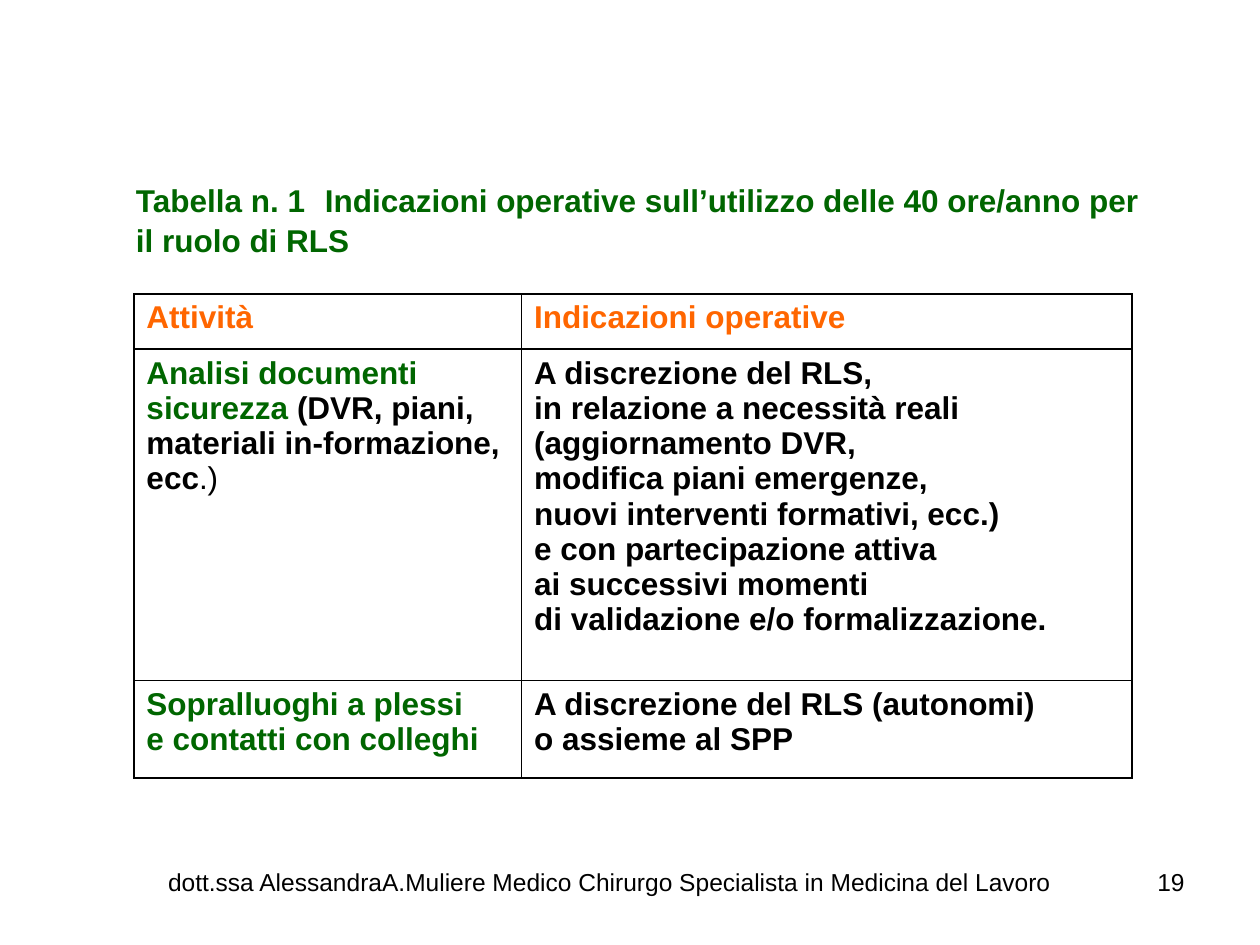
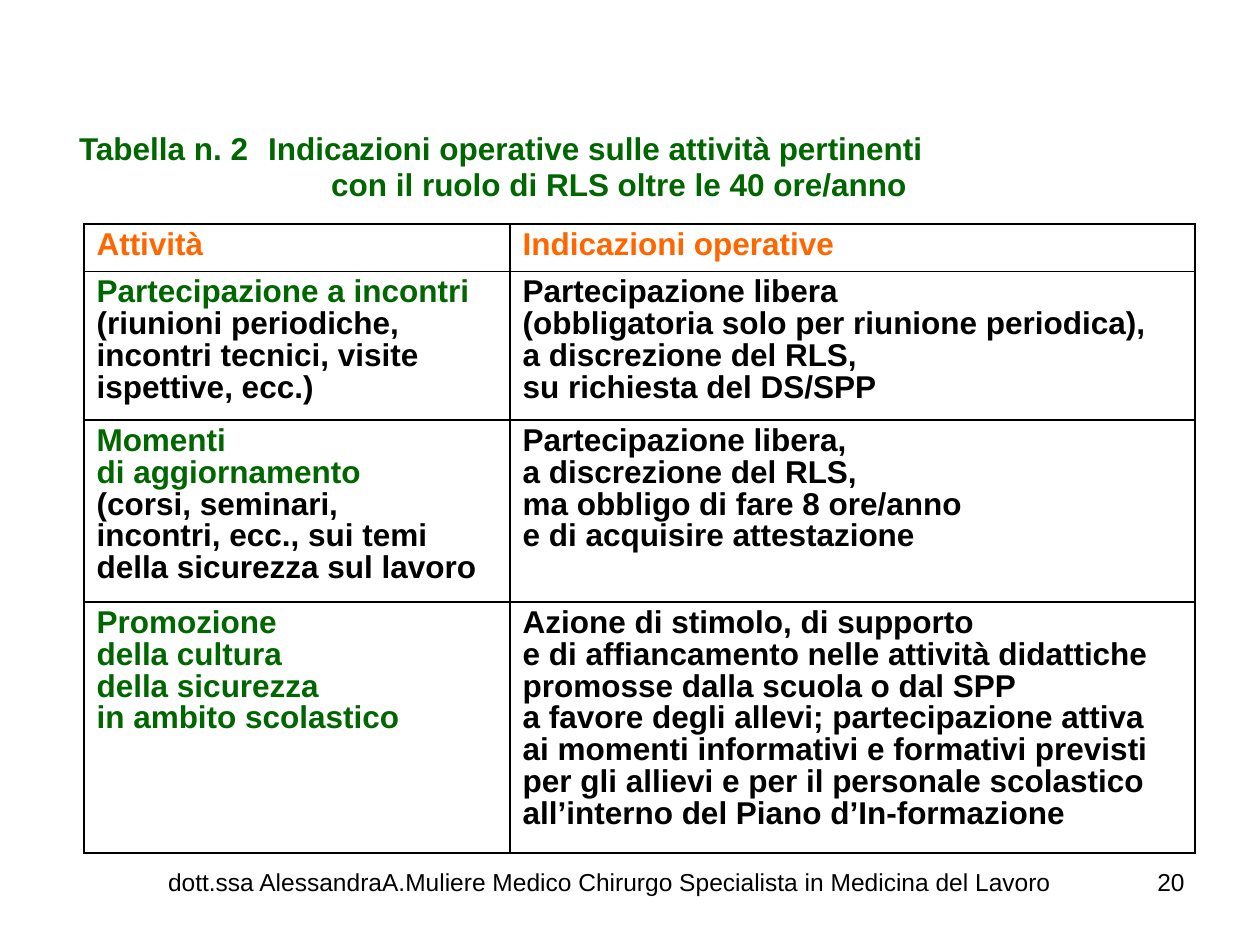
"""Build two slides of tables on the yearly hours and duties of the RLS role."""
from lxml import etree
from pptx import Presentation
from pptx.dml.color import RGBColor
from pptx.enum.text import MSO_ANCHOR, MSO_AUTO_SIZE, PP_ALIGN
from pptx.oxml.ns import qn
from pptx.util import Pt

LEFT, CENTER, RIGHT = PP_ALIGN.LEFT, PP_ALIGN.CENTER, PP_ALIGN.RIGHT
TOP, MIDDLE = MSO_ANCHOR.TOP, MSO_ANCHOR.MIDDLE
NO_FIT = MSO_AUTO_SIZE.NONE


class Theme:
    font = "Arial"
    green = RGBColor(0x00, 0x66, 0x00)
    orange = RGBColor(0xFF, 0x66, 0x00)
    black = RGBColor(0, 0, 0)
    white = RGBColor(255, 255, 255)
    body = Pt(18)
    small = Pt(14)
    rule = Pt(1)


def lines(color, *texts):
    return [[(text, color, True)] for text in texts]


def write(frame, paras, size=Theme.body, align=LEFT, gap=1.0):
    frame.word_wrap = True
    for i, runs in enumerate(paras):
        para = frame.add_paragraph() if i else frame.paragraphs[0]
        para.alignment = align
        para.line_spacing = gap
        para.space_before = para.space_after = Pt(0)
        for text, color, bold in runs:
            run = para.add_run()
            run.text = text
            run.font.name = Theme.font
            run.font.size = size
            run.font.bold = bold
            run.font.color.rgb = color


green, black = Theme.green, Theme.black
head = [lines(Theme.orange, "Attività"), lines(Theme.orange, "Indicazioni operative")]

hours = [
    head,
    [
        lines(green, "Analisi documenti")
        + [[("sicurezza", green, True), (" (DVR, piani,", black, True)]]
        + lines(black, "materiali in-formazione,")
        + [[("ecc", black, True), (".)", black, False)]],
        lines(black, "A discrezione del RLS,", "in relazione a necessità reali",
              "(aggiornamento DVR,", "modifica piani emergenze,",
              "nuovi interventi formativi, ecc.)", "e con partecipazione attiva",
              "ai successivi momenti", "di validazione e/o formalizzazione."),
    ],
    [
        lines(green, "Sopralluoghi a plessi", "e contatti con colleghi"),
        lines(black, "A discrezione del RLS (autonomi)", "o assieme al SPP"),
    ],
]

duties = [
    head,
    [
        lines(green, "Partecipazione a incontri")
        + lines(black, "(riunioni periodiche, incontri tecnici, visite ispettive, ecc.)"),
        lines(black, "Partecipazione libera", "(obbligatoria solo per riunione periodica),",
              "a discrezione del RLS,", "su richiesta del DS/SPP"),
    ],
    [
        lines(green, "Momenti", "di aggiornamento")
        + lines(black, "(corsi, seminari,", "incontri, ecc., sui temi della sicurezza sul lavoro"),
        lines(black, "Partecipazione libera,", "a discrezione del RLS,",
              "ma obbligo di fare 8 ore/anno", "e di acquisire attestazione"),
    ],
    [
        lines(green, "Promozione", "della cultura", "della sicurezza", "in ambito scolastico"),
        lines(black, "Azione di stimolo, di supporto",
              "e di affiancamento nelle attività didattiche promosse dalla scuola o dal SPP",
              "a favore degli allevi; partecipazione attiva",
              "ai momenti informativi e formativi previsti per gli allievi e per il personale "
              "scolastico all’interno del Piano d’In-formazione"),
    ],
]

pages = [
    dict(num="19", title=["Tabella n. 1\tIndicazioni operative sull’utilizzo delle 40 ore/anno "
                          "per il ruolo di RLS"],
         box=(70.5, 100, 599, 50.5), anchor=MIDDLE, lead=1.05, cells=hours, gap=1.0,
         spot=(76.5, 168), cols=(221.5, 349), rows=(31.5, 189.5, 55.5)),
    dict(num="20", title=["Tabella n. 2\tIndicazioni operative sulle attività pertinenti",
                          "con il ruolo di RLS oltre le 40 ore/anno"],
         box=(38, 71.5, 538, 46), anchor=TOP, lead=0.95, cells=duties, gap=0.9,
         spot=(48, 128), cols=(243.5, 391.5), rows=(27, 85, 104, 143.5)),
]

deck = Presentation()
deck.slide_width, deck.slide_height = Pt(720), Pt(540)

for page in pages:
    slide = deck.slides.add_slide(deck.slide_layouts[5])
    title = slide.shapes.title
    title.left, title.top, title.width, title.height = map(Pt, page["box"])
    frame = title.text_frame
    frame.auto_size = NO_FIT
    frame.vertical_anchor = page["anchor"]
    write(frame, lines(green, *page["title"]), gap=page["lead"])
    for para in frame.paragraphs[1:]:
        para._p.get_or_add_pPr().set("marL", str(Pt(144)))

    cols, rows = page["cols"], page["rows"]
    grid = slide.shapes.add_table(len(rows), len(cols), *map(Pt, page["spot"]),
                                  Pt(sum(cols)), Pt(sum(rows))).table
    grid.first_row = grid.horz_banding = False
    for col, width in zip(grid.columns, cols):
        col.width = Pt(width)
    for r, height in enumerate(rows):
        grid.rows[r].height = Pt(height)
        for c, paras in enumerate(page["cells"][r]):
            cell = grid.cell(r, c)
            props = cell._tc.get_or_add_tcPr()
            for side in ("lnL", "lnR", "lnT", "lnB"):
                edge = etree.SubElement(props, qn("a:" + side), w=str(Theme.rule))
                fill = etree.SubElement(edge, qn("a:solidFill"))
                etree.SubElement(fill, qn("a:srgbClr"), val=str(black))
            cell.fill.solid()
            cell.fill.fore_color.rgb = Theme.white
            write(cell.text_frame, paras, gap=page["gap"])

    credit = "dott.ssa AlessandraA.Muliere Medico Chirurgo Specialista in Medicina del Lavoro"
    for text, left, width, align in ((page["num"], 516, 168, RIGHT), (credit, 48, 601, CENTER)):
        foot = slide.shapes.add_textbox(Pt(left), Pt(492), Pt(width), Pt(37.5))
        write(foot.text_frame, [[(text, black, False)]], Theme.small, align)

deck.save("out.pptx")
